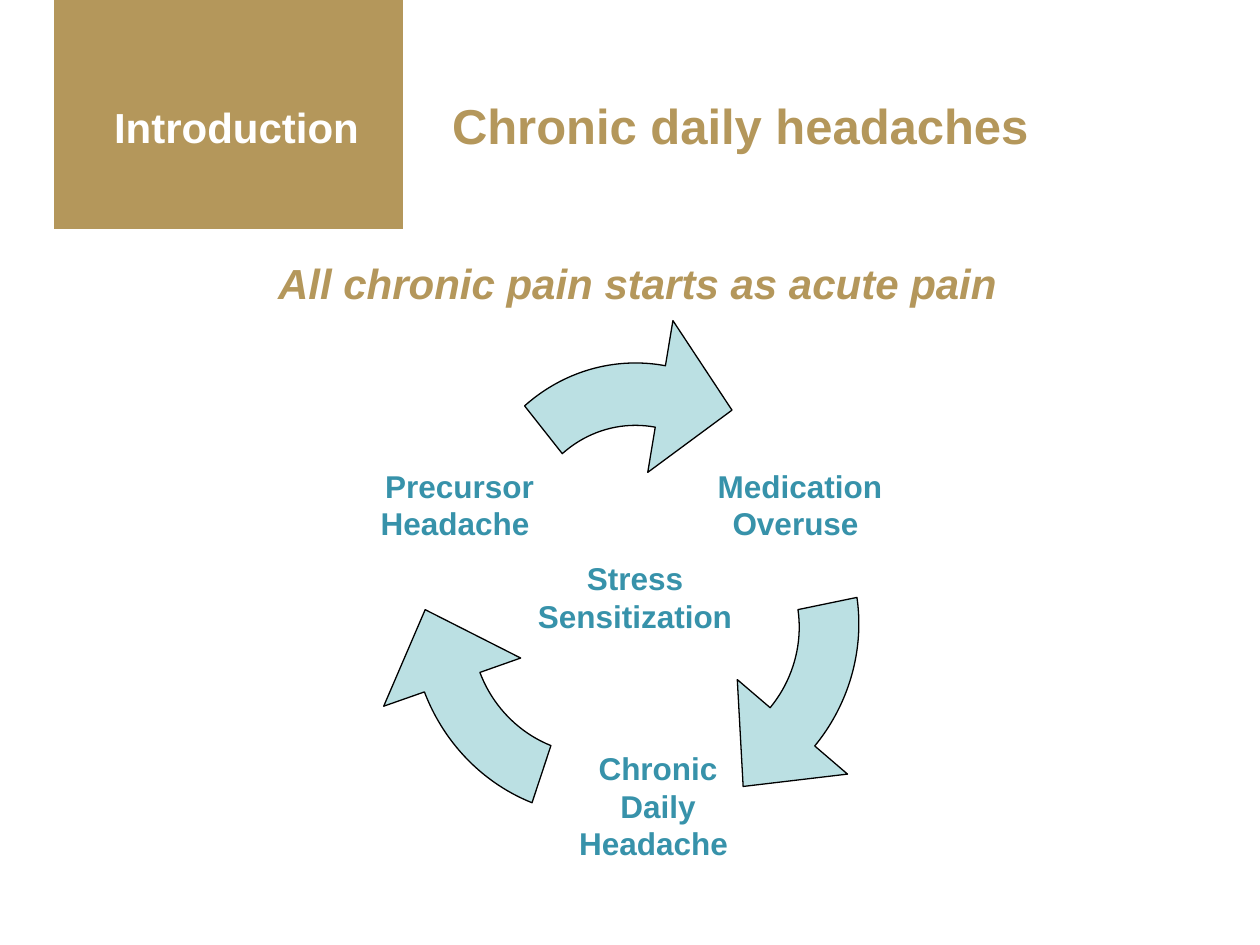
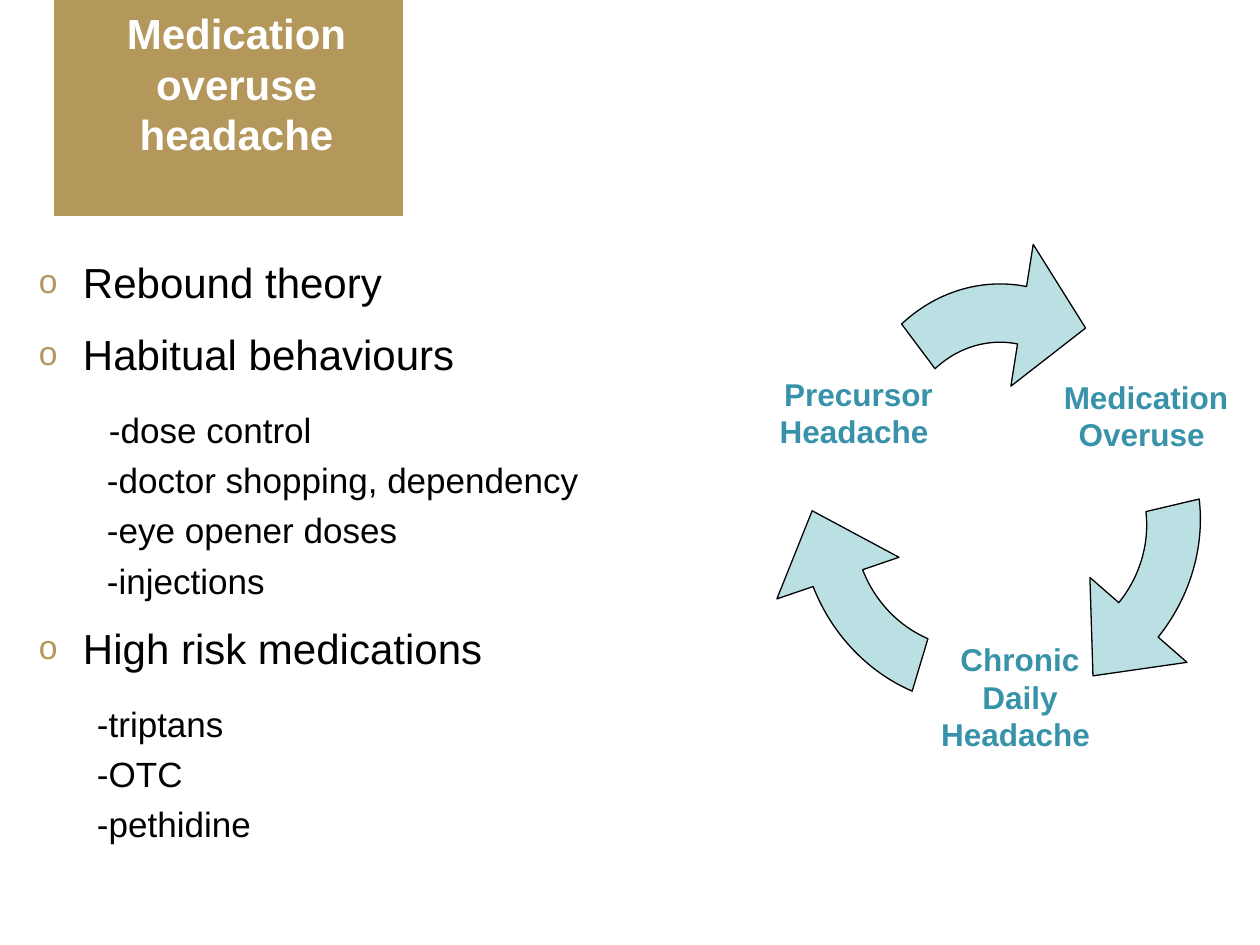
from math import cos, sin, tan, radians
from lxml.etree import SubElement
from pptx import Presentation
from pptx.dml.color import RGBColor
from pptx.enum.shapes import MSO_SHAPE
from pptx.enum.text import MSO_ANCHOR, PP_ALIGN
from pptx.oxml import parse_xml
from pptx.oxml.ns import nsdecls, qn
from pptx.util import Emu, Pt

SCALE = 914400 / 126
GOLD, TEAL, PALE = "B4975B", "3792AA", "BBE0E3"
BLACK, WHITE = "000000", "FFFFFF"
FONT = "Arial"
LEAD = 16  # left margin of every heading
BODY = (8, 13, 13, 6)
NONE = (0, 0, 0, 0)

HEAD = {"name": FONT, "size": Pt(24), "bold": True}
TITLE = {"name": FONT, "size": Pt(28), "bold": True}
CLAIM = {"name": FONT, "size": Pt(24), "bold": True, "italic": True}
LABEL = {"name": FONT, "size": Pt(18), "bold": True}
POINT = {"name": FONT, "size": Pt(24)}
SUB = {"name": FONT, "size": Pt(20)}

CENTER = {"alignment": PP_ALIGN.CENTER}
TIGHT = {"line_spacing": Pt(28.8)}
SPACED = {**TIGHT, "space_after": Pt(12)}

# Each cause with its items and their left margins
CAUSES = [
    ("Rebound theory", []),
    ("Habitual behaviours", [("-dose control", 86),
                             ("-doctor shopping, dependency", 84),
                             ("-eye opener doses", 84),
                             ("-injections", 84)]),
    ("High risk medications", [("-triptans", 74), ("-OTC", 74),
                               ("-pethidine", 74)]),
]


def px(value):
    return Emu(round(value * SCALE))


def color(code):
    return RGBColor.from_string(code)


def apply(target, style):
    for name, value in style.items():
        setattr(target, name, value)


def setup(frame, insets, anchor=MSO_ANCHOR.TOP):
    """Wrap a text frame; insets run left, top, right, bottom."""
    frame.word_wrap = True
    frame.vertical_anchor = anchor
    sides = ("left", "top", "right", "bottom")
    apply(frame, {f"margin_{s}": px(v) for s, v in zip(sides, insets)})


def write(frame, text, font, code, layout, left=0, hang=0):
    """Fill the empty first paragraph, or add another below it."""
    para = frame.paragraphs[0]
    if para.runs:
        para = frame.add_paragraph()
    apply(para, layout)
    props = para._p.get_or_add_pPr()
    props.set("marL", str(px(left)))
    props.set("indent", str(px(-hang)))
    run = para.add_run()
    run.text = text
    apply(run.font, font)
    run.font.color.rgb = color(code)
    return para


def bullet(para):
    props = para._p.get_or_add_pPr()
    for tag in (f'buClr {{}}><a:srgbClr val="{GOLD}"/></a:buClr>',
                'buSzPct {} val="80000"/>',
                f'buFont {{}} typeface="{FONT}"/>',
                'buChar {} char="o"/>'):
        props.append(parse_xml("<a:" + tag.format(nsdecls("a"))))


def paint(shape, code):
    shape.shadow.inherit = False
    shape.fill.solid()
    shape.fill.fore_color.rgb = color(code)


def box(slide, area, insets, anchor=MSO_ANCHOR.TOP):
    shape = slide.shapes.add_textbox(*map(px, area))
    setup(shape.text_frame, insets, anchor)
    return shape.text_frame


def banner(slide, lines, height, top, pitch):
    """Gold block hanging from the top edge, its text starting at top."""
    shape = slide.shapes.add_shape(MSO_SHAPE.RECTANGLE,
                                   *map(px, (54, 0, 349, height)))
    paint(shape, GOLD)
    shape.line.fill.background()
    setup(shape.text_frame, (13, top, 13, 0))
    for line in lines:
        write(shape.text_frame, line, HEAD, WHITE,
              {**CENTER, "line_spacing": Pt(pitch)}, LEAD)


def polar(radius, angle, lean=0):
    """Point at a clockwise angle from the top, moved along its tangent."""
    turn = radians(angle)
    return (radius * (sin(turn) + lean * cos(turn)),
            radius * (lean * sin(turn) - cos(turn)))


def curve(radius, start, end):
    """Cubic for one arc: two handles and the end point."""
    lean = 4 / 3 * tan(radians(end - start) / 4)
    return ("cubicBezTo", polar(radius, start, lean),
            polar(radius, end, -lean), polar(radius, end))


def arrow(slide, area, turn):
    """Curved arrow on the ellipse that fills area, with a rotation."""
    left, top, width, height = area
    right, low = left + width, top + height
    frame = slide.shapes.build_freeform(px(left), px(top))
    frame.add_line_segments([(px(right), px(top)), (px(right), px(low)),
                             (px(left), px(low))])
    shape = frame.convert_to_shape()
    track = shape._element.spPr.find(".//" + qn("a:pathLst"))[0]
    for step in list(track):
        track.remove(step)
    steps = [("moveTo", polar(0.66, 10)),
             curve(0.66, 10, 0), curve(0.66, 0, -40),
             ("lnTo", polar(1, -40)),
             curve(1, -40, 0), curve(1, 0, 10),
             ("lnTo", polar(1.25, 10)), ("lnTo", polar(0.93, 37)),
             ("lnTo", polar(0.41, 10)), ("close",)]
    for kind, *points in steps:
        step = SubElement(track, qn("a:" + kind))
        for x, y in points:
            SubElement(step, qn("a:pt"), x=str(px((1 + x) * width / 2)),
                       y=str(px((1 + y) * height / 2)))
    shape.rotation = turn
    paint(shape, PALE)
    shape.line.color.rgb = color(BLACK)
    shape.line.width = Pt(0.75)


def label(slide, area, *lines):
    frame = box(slide, area, NONE, MSO_ANCHOR.MIDDLE)
    for line in lines:
        write(frame, line, LABEL, TEAL, CENTER)


def cycle(slide, rings, spots):
    for index, ring in enumerate(rings):
        arrow(slide, ring, 120 * index)
    names = ("Medication Overuse ", "Chronic Daily Headache ",
             "Precursor Headache ")
    for spot, name in zip(spots, names):
        label(slide, spot, name)


def intro(slide):
    frame = box(slide, (35, 245, 1194, 655), BODY)
    write(frame, "All chronic pain starts as acute pain", CLAIM, GOLD,
          {**CENTER, **TIGHT}, LEAD)
    banner(slide, ["Introduction"], 229, 99, 30.4)
    frame = box(slide, (423, 89, 626, 72), (13, 6, 13, 6))
    write(frame, "Chronic daily headaches", TITLE, GOLD, {}, LEAD)
    cycle(slide,
          [(463, 363, 345, 367), (500, 461, 367, 345), (404, 462, 367, 345)],
          [(705, 431, 190, 147), (566, 732, 184, 147), (369, 431, 181, 147)])
    label(slide, (448, 523, 374, 147), "Stress", "Sensitization")


def overuse(slide):
    banner(slide, ["Medication", "overuse", "headache"], 216, 8, 28.8)
    frame = box(slide, (15, 244, 989, 653), BODY)
    for cause, items in CAUSES:
        bullet(write(frame, cause, POINT, BLACK, SPACED, 60, 44))
        for item, left in items:
            last = item == items[-1][0]
            write(frame, item, SUB, BLACK, SPACED if last else TIGHT, left)
    cycle(slide,
          [(847, 284, 306, 343), (871, 383, 343, 306), (787, 384, 343, 306)],
          [(1062, 347, 168, 137), (938, 628, 164, 137), (778, 344, 161, 137)])


def main():
    deck = Presentation()
    deck.slide_width, deck.slide_height = px(1260), px(945)
    for fill in (intro, overuse):
        fill(deck.slides.add_slide(deck.slide_layouts[6]))
    deck.save("out.pptx")


if __name__ == "__main__":
    main()
